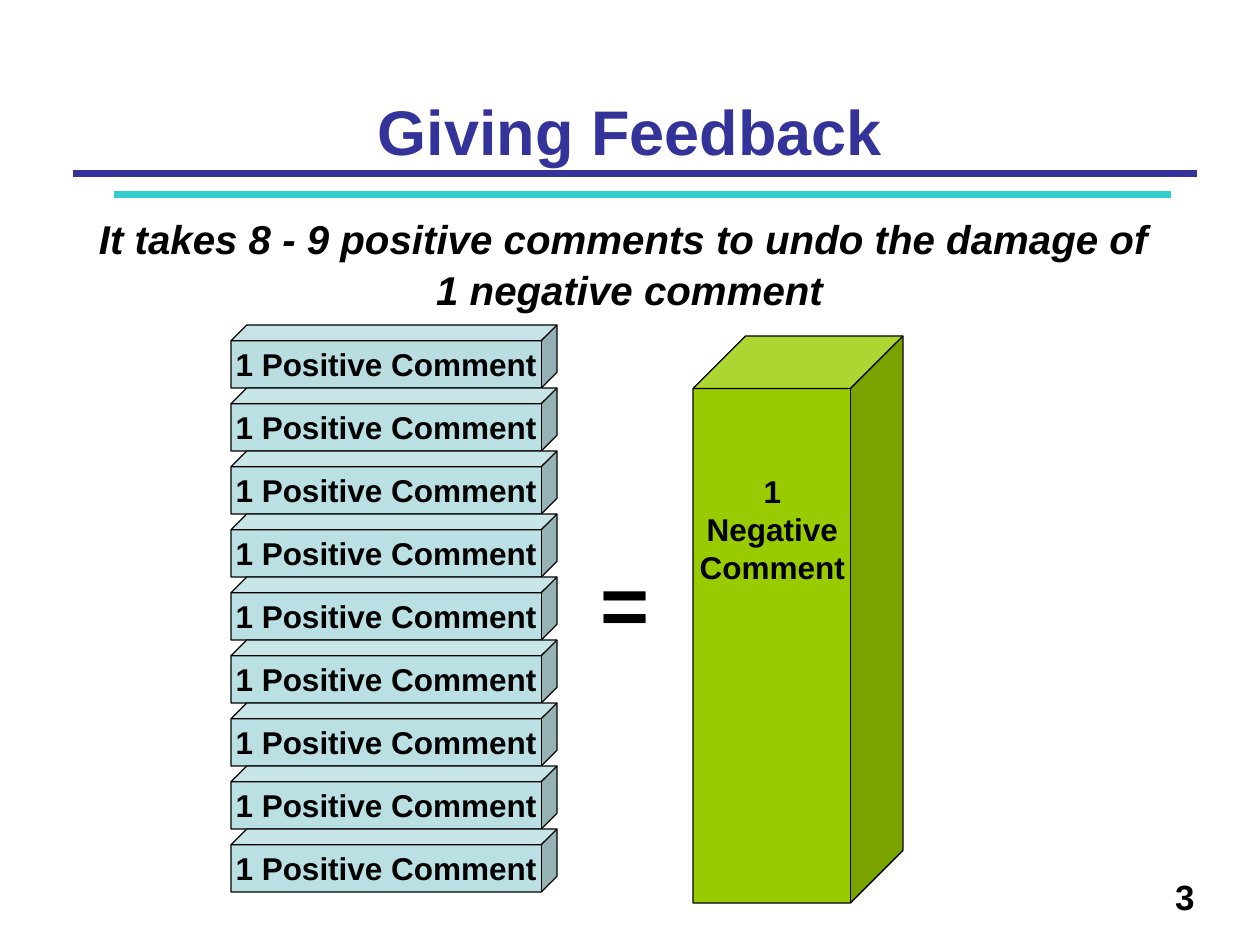
from dataclasses import dataclass

from lxml.etree import SubElement
from pptx import Presentation
from pptx.dml.color import RGBColor
from pptx.enum.shapes import MSO_CONNECTOR as Connector, MSO_SHAPE as Shape
from pptx.enum.text import MSO_ANCHOR as Anchor, PP_ALIGN as Align
from pptx.oxml.ns import qn
from pptx.util import Emu, Pt


@dataclass(frozen=True)
class Theme:
    font: str = "Arial"
    title: str = "333399"
    accent: str = "33CCCC"
    text: str = "000000"
    positive: str = "BBE0E3"
    positive_top: str = "BADDE1"
    negative: str = "99CC00"
    title_size: int = 36
    message_size: int = 23
    label_size: int = 18
    equals_size: int = 48
    number_size: int = 20
    rule_width: float = 4
    outline_width: float = 0.75


THEME = Theme()


def px(length):
    return Emu(round(length * 914400 / 126))


def color(code):
    return RGBColor.from_string(code)


def place(shape, box):
    shape.left, shape.top, shape.width, shape.height = map(px, box)


def write(frame, lines, size, align=Align.CENTER, code=THEME.text, italic=False):
    """Fill a frame with one bold paragraph per line; a newline breaks within it."""
    for index, line in enumerate(lines):
        paragraph = frame.add_paragraph() if index else frame.paragraphs[0]
        paragraph.alignment = align
        for part_index, part in enumerate(line.split("\n")):
            if part_index:
                paragraph.add_line_break()
            run = paragraph.add_run()
            run.text = part
            font = run.font
            font.name, font.size = THEME.font, Pt(size)
            font.bold, font.italic = True, italic
            font.color.rgb = color(code)


def add_text_frame(shapes, box):
    frame = shapes.add_textbox(*map(px, box)).text_frame
    frame.word_wrap = True
    return frame


def add_rule(slide, left, right, middle, code):
    rule = slide.shapes.add_connector(
        Connector.STRAIGHT, px(left), px(middle), px(right), px(middle))
    rule.line.color.rgb = color(code)
    rule.line.width = Pt(THEME.rule_width)
    SubElement(rule._element.spPr, qn("a:effectLst"))


def add_cube(shapes, box, fill):
    cube = shapes.add_shape(Shape.CUBE, *map(px, box))
    cube.shadow.inherit = False
    cube.fill.solid()
    cube.fill.fore_color.rgb = color(fill)
    cube.line.color.rgb = color(THEME.text)
    cube.line.width = Pt(THEME.outline_width)
    return cube


def add_header(slide, box):
    left, top, width, height = box
    title = slide.shapes.title
    place(title, box)
    title.text_frame.vertical_anchor = Anchor.BOTTOM
    write(title.text_frame, ["Giving Feedback"], THEME.title_size, code=THEME.title)
    bottom = top + height
    add_rule(slide, left + 10, left + width, bottom, THEME.title)
    add_rule(slide, left + 51, left + width - 26, bottom + 21, THEME.accent)


def add_message(slide, box):
    frame = add_text_frame(slide.shapes, box)
    frame.margin_top = px(15)
    write(frame, ["It takes 8 - 9 positive comments to undo the damage of ",
                  "1 negative comment"], THEME.message_size, italic=True)
    frame.paragraphs[1].space_before = Pt(2)


def add_positive_stack(slide, box, count=9):
    left, top, width, height = box
    step = height // count
    group = slide.shapes.add_group_shape()
    for index in range(count):
        fill = THEME.positive if index else THEME.positive_top
        cube = add_cube(group.shapes, (left, top + index * step, width, step), fill)
        frame = cube.text_frame
        frame.word_wrap = False
        frame.vertical_anchor = Anchor.MIDDLE
        write(frame, ["1 Positive Comment"], THEME.label_size)


def add_equals_sign(slide, box):
    frame = add_text_frame(slide.shapes, box)
    frame.vertical_anchor = Anchor.BOTTOM
    write(frame, ["="], THEME.equals_size, Align.LEFT)


def add_negative_block(slide, box):
    left, top, width, height = box
    group = slide.shapes.add_group_shape()
    add_cube(group.shapes, box, THEME.negative)
    frame = add_text_frame(group.shapes, (left, top + 130, width - 39, 126))
    frame.margin_left = 0
    write(frame, ["1\nNegative Comment"], THEME.label_size)


def add_slide_number(slide, box):
    write(add_text_frame(slide.shapes, box), ["3"], THEME.number_size, Align.RIGHT)


def main():
    presentation = Presentation()
    presentation.slide_width, presentation.slide_height = px(1260), px(945)
    slide = presentation.slides.add_slide(presentation.slide_layouts[5])
    add_header(slide, (63, 16, 1134, 158))
    add_message(slide, (63, 199, 1134, 136))
    add_positive_stack(slide, (231, 325, 326, 567))
    add_equals_sign(slide, (588, 546, 63, 113))
    add_negative_block(slide, (693, 336, 210, 567))
    add_slide_number(slide, (608, 869, 599, 66))
    presentation.save("out.pptx")


if __name__ == "__main__":
    main()
